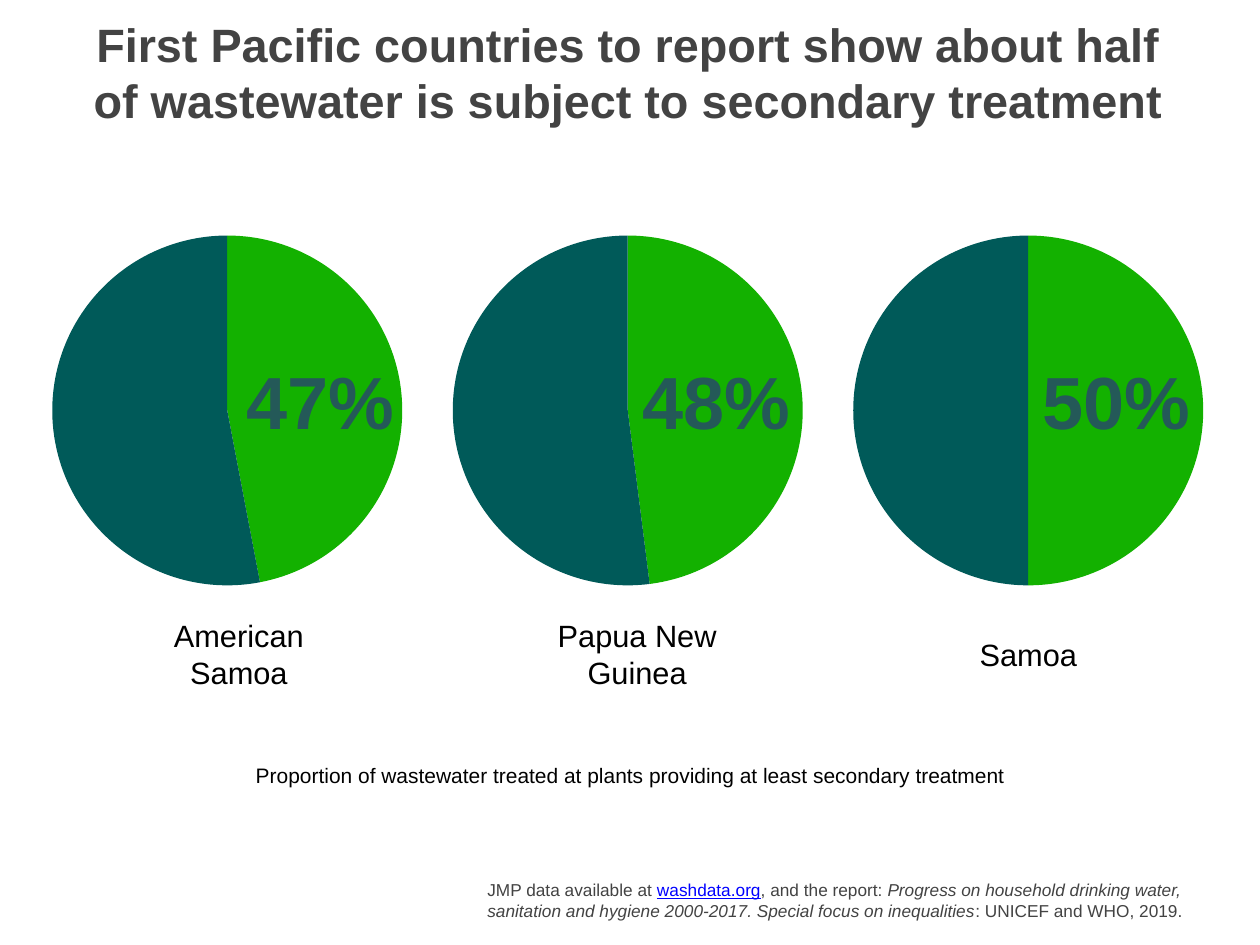
from lxml import etree
from pptx import Presentation
from pptx import util as u
from pptx.chart import data as cd
from pptx.dml.color import RGBColor
from pptx.enum import chart as ch, text

FONT = "Arial"
GREEN, TEAL, PERCENT = "13B100", "005A59", "245958"
GREY, BLACK, WHITE, LINK = "434343", "000000", "FFFFFF", "0000FF"
CHART_NS = "http://schemas.openxmlformats.org/drawingml/2006/chart"


def rgb(value):
    return RGBColor.from_string(value)


class Deck:
    """Holds the presentation, its style and the current slide."""

    def __init__(self, width, height):
        self.prs = Presentation()
        self.prs.slide_width = u.Inches(width)
        self.prs.slide_height = u.Inches(height)

    def add_slide(self):
        self.s = self.prs.slides.add_slide(self.prs.slide_layouts[5])
        self.s.background.fill.solid()
        self.s.background.fill.fore_color.rgb = rgb(WHITE)

    def set_text(self, sp, box, runs, size, color, bold=False, center=True, wrap=True):
        """Place a shape and fill it with (text, font settings) runs."""
        sp.left, sp.top, sp.width, sp.height = map(u.Inches, box)
        tf = sp.text_frame
        tf.word_wrap = wrap
        tf.auto_size = text.MSO_AUTO_SIZE.NONE
        tf.vertical_anchor = text.MSO_ANCHOR.MIDDLE
        tf.margin_left = tf.margin_right = u.Inches(0.06)
        tf.margin_top = tf.margin_bottom = u.Inches(0.06)
        p = tf.paragraphs[0]
        p.alignment = text.PP_ALIGN.CENTER if center else text.PP_ALIGN.LEFT
        p.font.name, p.font.size, p.font.bold = FONT, u.Pt(size), bold
        p.font.color.rgb = rgb(color)
        for words, style in runs:
            r = p.add_run()
            r.text = words
            if "color" in style:
                r.font.color.rgb = rgb(style["color"])
            if "underline" in style:
                r.font.underline = style["underline"]
            if "italic" in style:
                r.font.italic = style["italic"]

    def title(self, box, words, size, color):
        self.set_text(self.s.shapes.title, box, [(words, {})], size, color, bold=True)

    def text(self, box, runs, size, color, **style):
        if isinstance(runs, str):
            runs = [(runs, {})]
        sp = self.s.shapes.add_textbox(*map(u.Inches, box))
        self.set_text(sp, box, runs, size, color, **style)

    def pie(self, left, top, side, share):
        data = cd.CategoryChartData()
        data.categories = ["1", "2"]
        data.add_series("Series 1", (share, 100 - share))
        box = map(u.Inches, (left, top, side, side))
        chart = self.s.shapes.add_chart(ch.XL_CHART_TYPE.PIE, *box, data).chart
        chart.has_legend = chart.has_title = False
        chart.font.name, chart.font.size = FONT, u.Pt(10)
        chart.font.color.rgb = rgb(WHITE)
        plot = chart.plots[0]
        plot.vary_by_categories = False
        for i, color in enumerate((GREEN, TEAL)):
            fmt = plot.series[0].points[i].format
            fmt.fill.solid()
            fmt.fill.fore_color.rgb = rgb(color)
            fmt.line.fill.background()
        self.fill_chart_area(chart)

    def fill_chart_area(self, chart):
        """Let the plot cover nearly the whole chart frame."""
        area = chart.plots[0]._element.getparent()
        for old in area.findall(f"{{{CHART_NS}}}layout"):
            area.remove(old)
        layout = etree.fromstring(f'<c:layout xmlns:c="{CHART_NS}"><c:manualLayout/></c:layout>')
        settings = [("layoutTarget", "inner"), ("xMode", "edge"), ("yMode", "edge"),
                    ("x", "0.005"), ("y", "0.005"), ("w", "0.99"), ("h", "0.99")]
        for tag, value in settings:
            etree.SubElement(layout[0], f"{{{CHART_NS}}}{tag}", val=value)
        area.insert(0, layout)


def main():
    deck = Deck(14.22, 10.67)
    deck.add_slide()

    # Title
    deck.title((0.9, 0.13, 12.38, 1.37),
               "First Pacific countries to report show about half "
               "of wastewater is subject to secondary treatment", 38, GREY)

    # One pie per country, with its share and name
    countries = [("American Samoa", 47, 2.67, 1.72, 1.95),
                 ("Papua New Guinea", 48, 7.14, 6.17, 2.04),
                 ("Samoa", 50, 11.65, 10.8, 1.61)]
    for i, (country, share, share_left, name_left, name_width) in enumerate(countries):
        deck.pie(0.57 + 4.52 * i, 2.64, 3.99, share)
        deck.text((share_left, 3.96, 1.89, 1.11), f"{share}%", 60, PERCENT,
                  bold=True, wrap=False)
        deck.text((name_left, 6.92, name_width, 0.93), country, 25, BLACK)

    # Caption
    deck.text((0.82, 8.56, 12.59, 0.38),
              "Proportion of wastewater treated at plants providing "
              "at least secondary treatment", 17, BLACK)

    # Source note
    deck.text((5.44, 9.89, 8.27, 0.55), [
        ("JMP data available at ", {}),
        ("washdata.org", {"color": LINK, "underline": True}),
        (", and the report: ", {}),
        ("Progress on household drinking water, sanitation and hygiene 2000-2017. "
         "Special focus on inequalities", {"italic": True}),
        (": UNICEF and WHO, 2019.", {}),
    ], 14, GREY, center=False)

    deck.prs.save("out.pptx")


if __name__ == "__main__":
    main()
